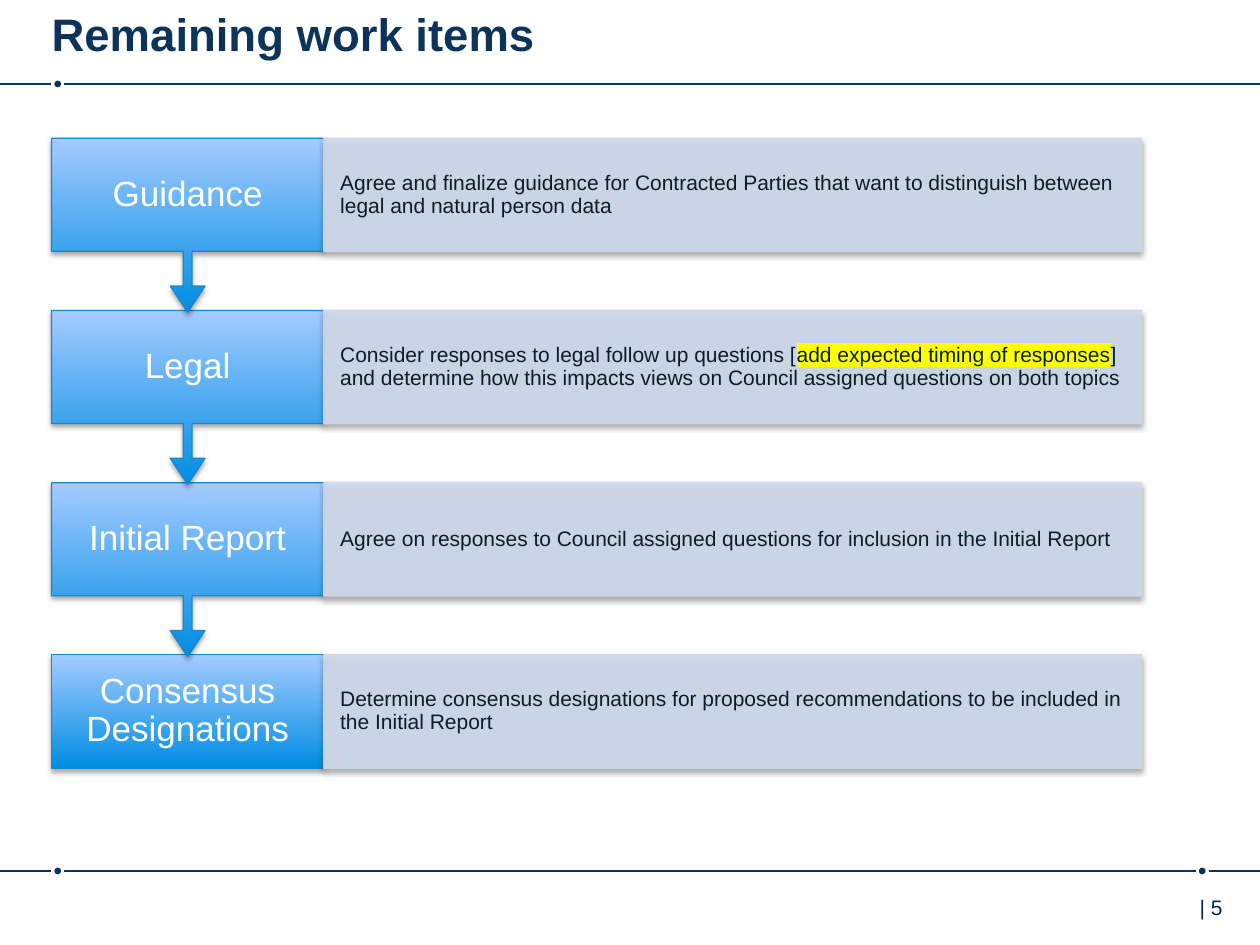
from lxml.etree import SubElement
from pptx import Presentation
from pptx.dml.color import RGBColor
from pptx.enum.shapes import MSO_CONNECTOR, MSO_SHAPE
from pptx.enum.text import MSO_ANCHOR, PP_ALIGN
from pptx.oxml.ns import qn
from pptx.util import Pt

NAVY, INK, PALE, YELLOW = "0C3458", "0A1F24", "CDD9EB", "FFFF00"
LEFT, TOP, PITCH = 29.5, 79, 98.4
STEP_W, NOTE_W, ROW_H, CALL_H = 155.5, 467.3, 64.8, 99.4
STEPS = [
    ("Guidance", "Agree and finalize guidance for Contracted Parties that want "
     "to distinguish between legal and natural person data"),
    ("Legal", "Consider responses to legal follow up questions [add expected "
     "timing of responses] and determine how this impacts views on Council "
     "assigned questions on both topics"),
    ("Initial Report", "Agree on responses to Council assigned questions for "
     "inclusion in the Initial Report"),
    ("Consensus Designations", "Determine consensus designations for proposed "
     "recommendations to be included in the Initial Report"),
]
MARK = "add expected timing of responses"


def rgb(code):
    return RGBColor.from_string(code)


def fade(fill, percent):
    """Make a solid fill partly transparent."""
    color = fill._xPr.find(qn("a:solidFill"))[0]
    SubElement(color, qn("a:alpha"), val=str(percent * 1000))


def shade(shape):
    """Give a shape a soft shadow straight below it."""
    shape.shadow.inherit = False
    effects = shape._element.spPr.find(qn("a:effectLst"))
    outer = SubElement(effects, qn("a:outerShdw"), blurRad=str(Pt(3.1)),
                       dist=str(Pt(1.8)), dir="5400000", rotWithShape="0")
    color = SubElement(outer, qn("a:srgbClr"), val="000000")
    SubElement(color, qn("a:alpha"), val="35000")


def write(shape, text, size=12, color=INK, bold=False, align=PP_ALIGN.LEFT,
          anchor=MSO_ANCHOR.MIDDLE, inset=(0, 0), spacing=0.9, mark=None):
    """Fill a shape with one paragraph, highlighting the words in mark."""
    frame = shape.text_frame
    frame.word_wrap = True
    frame.vertical_anchor = anchor
    frame.margin_left = frame.margin_right = Pt(inset[0])
    frame.margin_top = frame.margin_bottom = Pt(inset[1])
    para = frame.paragraphs[0]
    para.alignment, para.line_spacing = align, spacing
    for part in text.partition(mark) if mark else [text]:
        if not part:
            continue
        run = para.add_run()
        run.text = part
        font = run.font
        font.name, font.size, font.bold = "Arial", Pt(size), bold
        font.color.rgb = rgb(color)
        if part == mark:
            props = run._r.get_or_add_rPr()
            light = SubElement(props, qn("a:highlight"))
            SubElement(light, qn("a:srgbClr"), val=YELLOW)
            props.find(qn("a:solidFill")).addnext(light)


class Deck:
    """Holds the presentation, its current slide and the drawing style."""

    def __init__(self, width, height):
        self.pres = Presentation()
        self.pres.slide_width, self.pres.slide_height = Pt(width), Pt(height)
        self.width = width
        self.shapes = self.pres.slides.add_slide(
            self.pres.slide_layouts[6]).shapes

    def shape(self, kind, x, y, w, h):
        return self.shapes.add_shape(kind, Pt(x), Pt(y), Pt(w), Pt(h))

    def text(self, x, y, w, h, text, **style):
        box = self.shapes.add_textbox(Pt(x), Pt(y), Pt(w), Pt(h))
        write(box, text, anchor=MSO_ANCHOR.TOP, **style)

    def line(self, x, end, y):
        line = self.shapes.add_connector(
            MSO_CONNECTOR.STRAIGHT, Pt(x), Pt(y), Pt(end), Pt(y))
        line.line.color.rgb, line.line.width = rgb(NAVY), Pt(1)
        SubElement(line._element.spPr, qn("a:effectLst"))

    def dot(self, x, y, size=3.8):
        dot = self.shape(MSO_SHAPE.OVAL, x - size / 2, y - size / 2, size, size)
        dot.shadow.inherit = False
        dot.fill.solid()
        dot.fill.fore_color.rgb = rgb(NAVY)
        dot.line.fill.background()

    def rule(self, y, *dots, gap=3.6):
        """Draw a line across the slide, broken around each dot."""
        start = 0
        for x in dots:
            self.line(start, x - gap, y)
            self.dot(x, y)
            start = x + gap
        self.line(start, self.width, y)

    def step(self, y, text, last):
        """Draw a step box, with an arrow to the next unless it is last."""
        if last:
            box = self.shape(MSO_SHAPE.RECTANGLE, LEFT, y, STEP_W, ROW_H)
        else:
            box = self.shape(MSO_SHAPE.DOWN_ARROW_CALLOUT,
                             LEFT, y, STEP_W, CALL_H)
            for i, value in enumerate((0.05, 0.1, 0.15, 0.65)):
                box.adjustments[i] = value
        box.fill.gradient()
        box.fill.gradient_angle = 90
        for stop, color in zip(box.fill.gradient_stops, ("008DE3", "A4CBFF")):
            stop.color.rgb = rgb(color)
        box.line.color.rgb, box.line.width = rgb("1A87C9"), Pt(0.75)
        shade(box)
        write(box, text, size=20, color="FFFFFF", align=PP_ALIGN.CENTER,
              inset=(11, 11.5))

    def note(self, y, text):
        box = self.shape(MSO_SHAPE.RECTANGLE, LEFT + STEP_W, y, NOTE_W, ROW_H)
        box.line.width = Pt(0.75)
        for fill in (box.fill, box.line.fill):
            fill.solid()
            fill.fore_color.rgb = rgb(PALE)
            fade(fill, 90)
        shade(box)
        write(box, text, inset=(9.4, 12.2), mark=MARK)


def main():
    deck = Deck(720, 540)
    deck.rule(48, 33)
    deck.rule(497.7, 33, 687)
    deck.text(685.5, 507.6, 34, 28.8, "| 5", color="002B49",
              inset=(0, 3.6), spacing=1)
    deck.text(LEFT, 3.6, 630.7, 35.3, "Remaining work items", size=26,
              color=NAVY, bold=True, inset=(0, 3.6))
    # Bottom row first, so that each arrow lies over the box it points to.
    for i, (name, note) in reversed(list(enumerate(STEPS))):
        y = TOP + i * PITCH
        deck.step(y, name, last=i == len(STEPS) - 1)
        deck.note(y, note)
    deck.pres.save("out.pptx")


if __name__ == "__main__":
    main()
